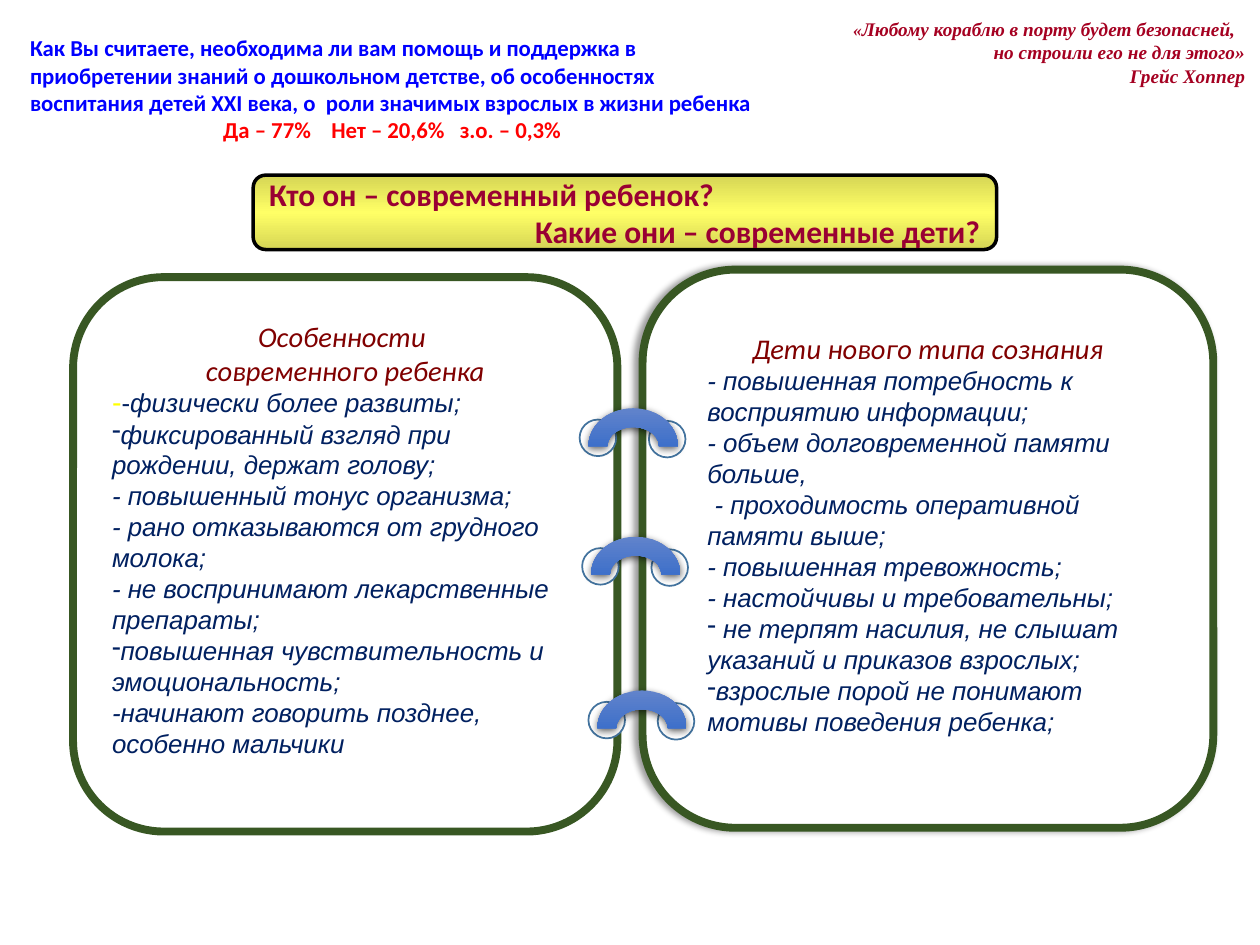
"""Build a slide comparing two descriptions of the modern child, bound by rings."""
from dataclasses import dataclass, field
from typing import Optional

from lxml import etree
from pptx import Presentation
from pptx import util as u
from pptx.dml.color import RGBColor
from pptx.enum import shapes, text
from pptx.oxml import ns

ALIGN = text.PP_ALIGN
SHAPE = shapes.MSO_SHAPE


@dataclass(frozen=True)
class Style:
    font: str
    size: float
    color: str
    bold: bool = False
    italic: bool = False
    spacing: Optional[float] = None


@dataclass(frozen=True)
class Theme:
    white: str = "FFFFFF"
    border: str = "385723"
    ring_line: str = "43739E"
    black: str = "000000"
    banner_fill: tuple = ("D5D555", "FFFF66", "D5D555")
    arc_fill: tuple = ("6183CB", "3E70CA", "3062BB")
    quote_mark: Style = Style("Times New Roman", 10, "A50021", True, True)
    quote: Style = Style("Times New Roman", 11, "A50021", True, True)
    question: Style = Style("Calibri", 13, "0000FF", True)
    answer: Style = Style("Calibri", 13, "FF0000", True)
    banner: Style = Style("Calibri", 18, "990033", True)
    heading: Style = Style("Calibri", 16.3, "800000", italic=True)
    body: Style = Style("Arial", 14.8, "002060", italic=True, spacing=17.7)
    dash: Style = Style("Arial", 14.8, "002060", spacing=17.7)
    yellow_dash: Style = Style("Arial", 16.3, "FFFF00", spacing=17.7)


@dataclass(frozen=True)
class Line:
    spans: list
    align: ALIGN = ALIGN.LEFT
    bullet: bool = False
    margin: float = 0


@dataclass(frozen=True)
class Shadow:
    alpha: int
    blur: float
    distance: float
    angle: int


@dataclass(frozen=True)
class Panel:
    place: tuple
    top_inset: float
    lines: list = field(default_factory=list)
    shadow: Optional[Shadow] = None


THEME = Theme()
ARC_SHADOW = Shadow(63, 4.5, 1.5, 90)
ARC_ORIGINS = ((4.74, 5.48), (4.67, 3.24), (4.69, 4.26))
RING_OFFSETS = ((0.48, 0.1), (-0.07, 0.09))


def line(words: str, style: Style, align: ALIGN = ALIGN.LEFT) -> Line:
    """Make a line that has one style."""
    return Line([(words, style)], align)


def items(entries: list, margin: float = 0) -> list:
    """Make body lines, where a leading bullet sign asks for a dash bullet."""
    return [Line([(entry.lstrip("•"), THEME.body)], bullet=entry.startswith("•"), margin=margin)
            for entry in entries]


QUOTE = [
    Line([("«", THEME.quote_mark), ("Любому кораблю в порту будет безопасней,  ", THEME.quote)], ALIGN.RIGHT),
    line("но строили его не для этого»", THEME.quote, ALIGN.RIGHT),
    line("Грейс Хоппер", THEME.quote, ALIGN.RIGHT),
]
SURVEY = [
    line("Как Вы считаете, необходима ли вам помощь и поддержка в приобретении знаний о дошкольном "
         "детстве, об особенностях воспитания детей XXI века, о  роли значимых взрослых в жизни ребенка",
         THEME.question),
    line("Да – 77%    Нет – 20,6%   з.о. – 0,3%", THEME.answer, ALIGN.CENTER),
]
BANNER = [
    line("Кто он – современный ребенок?", THEME.banner),
    line("Какие они – современные дети?", THEME.banner, ALIGN.RIGHT),
]
PANELS = [
    Panel((0.58, 2.2, 4.32, 4.4), 0.12, [
        line("Особенности ", THEME.heading, ALIGN.CENTER),
        line("современного ребенка", THEME.heading, ALIGN.CENTER),
        Line([("-", THEME.yellow_dash), ("-", THEME.dash), ("физически более развиты;", THEME.body)]),
        *items([
            "•фиксированный взгляд при рождении, держат голову;",
            "- повышенный тонус организма;",
            "- рано отказываются от грудного молока;",
            "- не воспринимают лекарственные препараты;",
            "•повышенная чувствительность и эмоциональность;",
            "-начинают говорить позднее, особенно мальчики",
        ])]),
    Panel((5.1, 2.14, 4.53, 4.43), 0.27, [
        line("Дети нового типа сознания", THEME.heading, ALIGN.CENTER),
        *items([
            "- повышенная потребность к восприятию информации;",
            "- объем долговременной памяти больше,",
            " - проходимость оперативной памяти выше;",
            "- повышенная тревожность;",
            "- настойчивы и требовательны;",
            "• не терпят насилия, не слышат указаний и приказов взрослых;",
            "•взрослые порой не понимают мотивы поведения ребенка;",
        ], 0.2)], Shadow(40, 4, 3, 180)),
]


def write(box, lines: list, anchor=text.MSO_ANCHOR.TOP) -> None:
    """Fill a box with styled lines."""
    frame = box.text_frame
    frame.word_wrap = True
    frame.vertical_anchor = anchor
    for index, entry in enumerate(lines):
        para = frame.add_paragraph() if index else frame.paragraphs[0]
        para.alignment = entry.align
        for words, style in entry.spans:
            span = para.add_run()
            span.text = words
            font = span.font
            font.name, font.size = style.font, u.Pt(style.size)
            font.bold, font.italic = style.bold, style.italic
            font.color.rgb = RGBColor.from_string(style.color)
            if style.spacing:
                para.line_spacing = u.Pt(style.spacing)
        properties = para._p.get_or_add_pPr()
        properties.set("marL", str(u.Inches(entry.margin)))
        properties.set("indent", "0")
        if entry.bullet:
            etree.SubElement(properties, ns.qn("a:buChar"), char="-")


def add_color(parent, color: str):
    """Append an RGB colour element."""
    return etree.SubElement(parent, ns.qn("a:srgbClr"), val=color)


def add_shape(page, kind, place: tuple, fill, border: Optional[str] = None, width: float = 1,
              shadow: Optional[Shadow] = None):
    """Add a shape with a plain or vertical gradient fill."""
    shape = page.shapes.add_shape(kind, *map(u.Inches, place))
    shape.shadow.inherit = False
    if isinstance(fill, str):
        shape.fill.solid()
        shape.fill.fore_color.rgb = RGBColor.from_string(fill)
    else:
        shape.fill.gradient()
        shape.fill.gradient_angle = 270
        stops = shape._element.spPr.find(".//" + ns.qn("a:gsLst"))
        stops[:] = []
        for index, color in enumerate(fill):
            add_color(etree.SubElement(stops, ns.qn("a:gs"), pos=str(index * 50000)), color)
    if border:
        shape.line.color.rgb = RGBColor.from_string(border)
        shape.line.width = u.Pt(width)
    else:
        shape.line.fill.background()
    if shadow:
        effects = shape._element.spPr.find(ns.qn("a:effectLst"))
        outer = etree.SubElement(effects, ns.qn("a:outerShdw"), blurRad=str(u.Pt(shadow.blur)),
                                 dist=str(u.Pt(shadow.distance)), dir=str(shadow.angle * 60000),
                                 algn="ctr", rotWithShape="0")
        etree.SubElement(add_color(outer, THEME.black), ns.qn("a:alpha"), val=str(shadow.alpha * 1000))
    return shape


def main() -> None:
    """Draw the slide and save it."""
    deck = Presentation()
    deck.slide_width, deck.slide_height = u.Inches(10), u.Inches(7.5)
    page = deck.slides.add_slide(deck.slide_layouts[6])
    write(page.shapes.add_textbox(*map(u.Inches, (5.59, 0.09, 4.39, 0.65))), QUOTE)
    banner = add_shape(page, SHAPE.ROUNDED_RECTANGLE, (2.01, 1.39, 5.9, 0.59),
                       THEME.banner_fill, THEME.black, 2)
    write(banner, BANNER, text.MSO_ANCHOR.MIDDLE)
    for panel in PANELS:
        box = add_shape(page, SHAPE.ROUNDED_RECTANGLE, panel.place, THEME.white, THEME.border, 4.5, panel.shadow)
        box.text_frame.margin_top = u.Inches(panel.top_inset)
        write(box, panel.lines)
    for left, top in ARC_ORIGINS:
        for across, down in RING_OFFSETS:
            add_shape(page, SHAPE.FLOWCHART_CONNECTOR, (left + across, top + down, 0.29, 0.29),
                      THEME.white, THEME.ring_line)
        add_shape(page, SHAPE.BLOCK_ARC, (left, top, 0.71, 0.6), THEME.arc_fill, shadow=ARC_SHADOW)
    write(page.shapes.add_textbox(*map(u.Inches, (0.14, 0.22, 5.94, 1.05))), SURVEY)
    deck.save("out.pptx")


if __name__ == "__main__":
    main()
